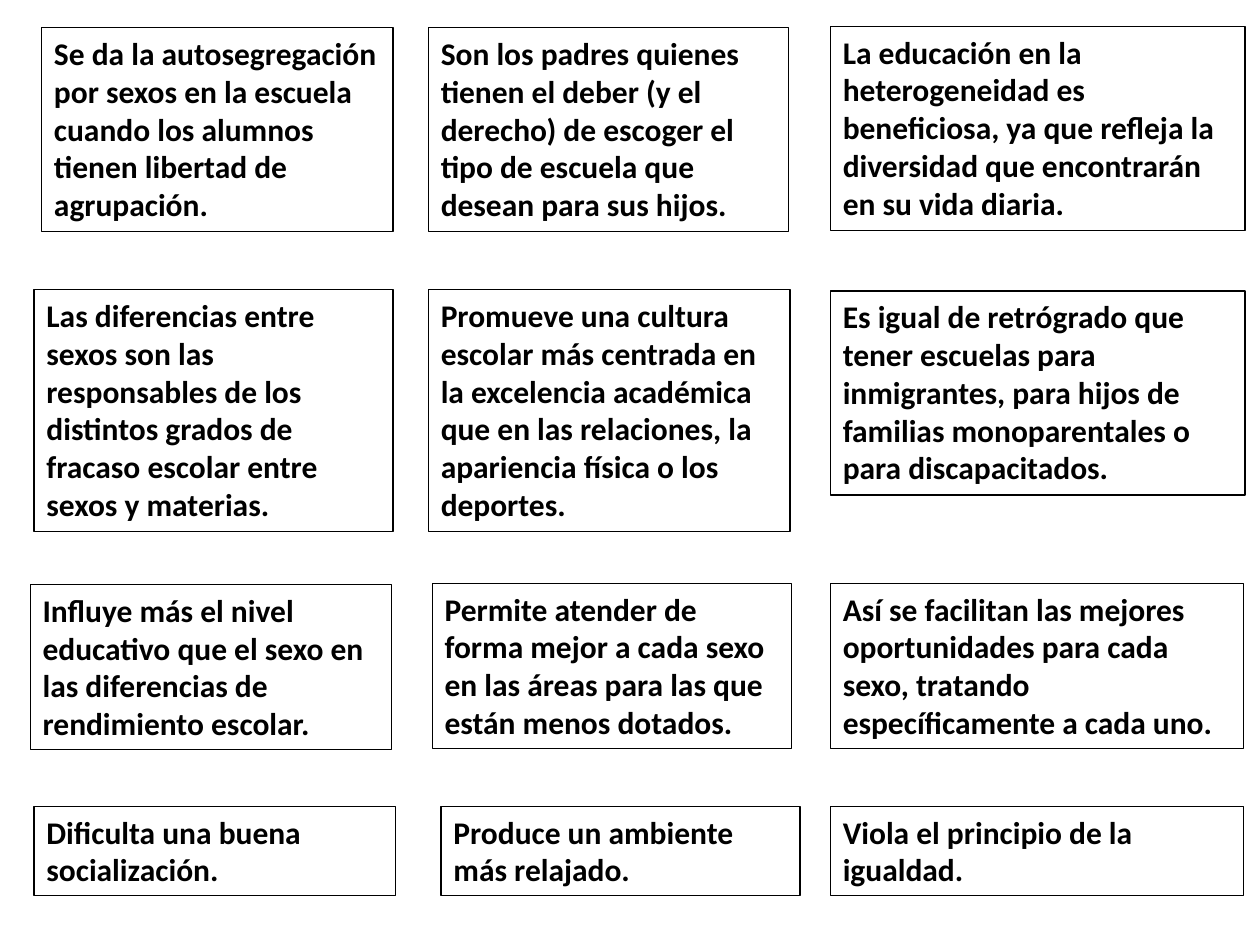
from typing import NamedTuple

from pptx import Presentation
from pptx.dml.color import RGBColor
from pptx.enum.text import MSO_AUTO_SIZE
from pptx.slide import Slide
from pptx.util import Emu, Pt

PX = 9144  # EMU per px, at 100 px to the inch
BLACK = RGBColor(0x00, 0x00, 0x00)
FONT = "Calibri"
FIT_SHAPE = MSO_AUTO_SIZE.SHAPE_TO_FIT_TEXT
BLANK_LAYOUT = 6


class Argument(NamedTuple):
    left: int
    top: int
    width: int
    height: int
    text: str


ARGUMENTS = [
    # First row
    Argument(33, 22, 279, 162, "Se da la autosegregación por sexos en la escuela "
             "cuando los alumnos tienen libertad de agrupación."),
    Argument(340, 22, 286, 162, "Son los padres quienes tienen el deber (y el derecho) "
             "de escoger el tipo de escuela que desean para sus hijos."),
    Argument(659, 21, 329, 162, "La educación en la heterogeneidad es beneficiosa, "
             "ya que refleja la diversidad que encontrarán en su vida diaria."),
    # Second row
    Argument(27, 230, 285, 192, "Las diferencias entre sexos son las responsables de los "
             "distintos grados de fracaso escolar entre sexos y materias."),
    Argument(340, 230, 287, 192, "Promueve una cultura escolar más centrada en la "
             "excelencia académica que en las relaciones, la apariencia física "
             "o los deportes."),
    Argument(659, 231, 329, 162, "Es igual de retrógrado que tener escuelas para "
             "inmigrantes, para hijos de familias monoparentales "
             "o para discapacitados."),
    # Third row
    Argument(24, 464, 287, 131, "Influye más el nivel educativo que el sexo en las "
             "diferencias de rendimiento escolar."),
    Argument(343, 463, 285, 131, "Permite atender de forma mejor a cada sexo en las "
             "áreas para las que están menos dotados."),
    Argument(659, 463, 328, 131, "Así se facilitan las mejores oportunidades para cada "
             "sexo, tratando específicamente a cada uno."),
    # Fourth row
    Argument(27, 640, 287, 71, "Dificulta una buena socialización."),
    Argument(350, 640, 285, 71, "Produce un ambiente más relajado."),
    Argument(659, 640, 328, 71, "Viola el principio de la igualdad."),
]


def px(length: int) -> Emu:
    return Emu(length * PX)


def add_argument(slide: Slide, argument: Argument) -> None:
    box = slide.shapes.add_textbox(px(argument.left), px(argument.top),
                                   px(argument.width), px(argument.height))
    box.line.color.rgb = BLACK
    box.line.width = Pt(0.75)
    frame = box.text_frame
    frame.word_wrap = True
    frame.auto_size = FIT_SHAPE
    run = frame.paragraphs[0].add_run()
    run.text = argument.text
    run.font.name = FONT
    run.font.size = Pt(18)
    run.font.bold = True
    run.font.color.rgb = BLACK


def main() -> None:
    presentation = Presentation()
    presentation.slide_width = px(1000)
    presentation.slide_height = px(750)
    slide = presentation.slides.add_slide(presentation.slide_layouts[BLANK_LAYOUT])
    for argument in ARGUMENTS:
        add_argument(slide, argument)
    presentation.save("out.pptx")


if __name__ == "__main__":
    main()
